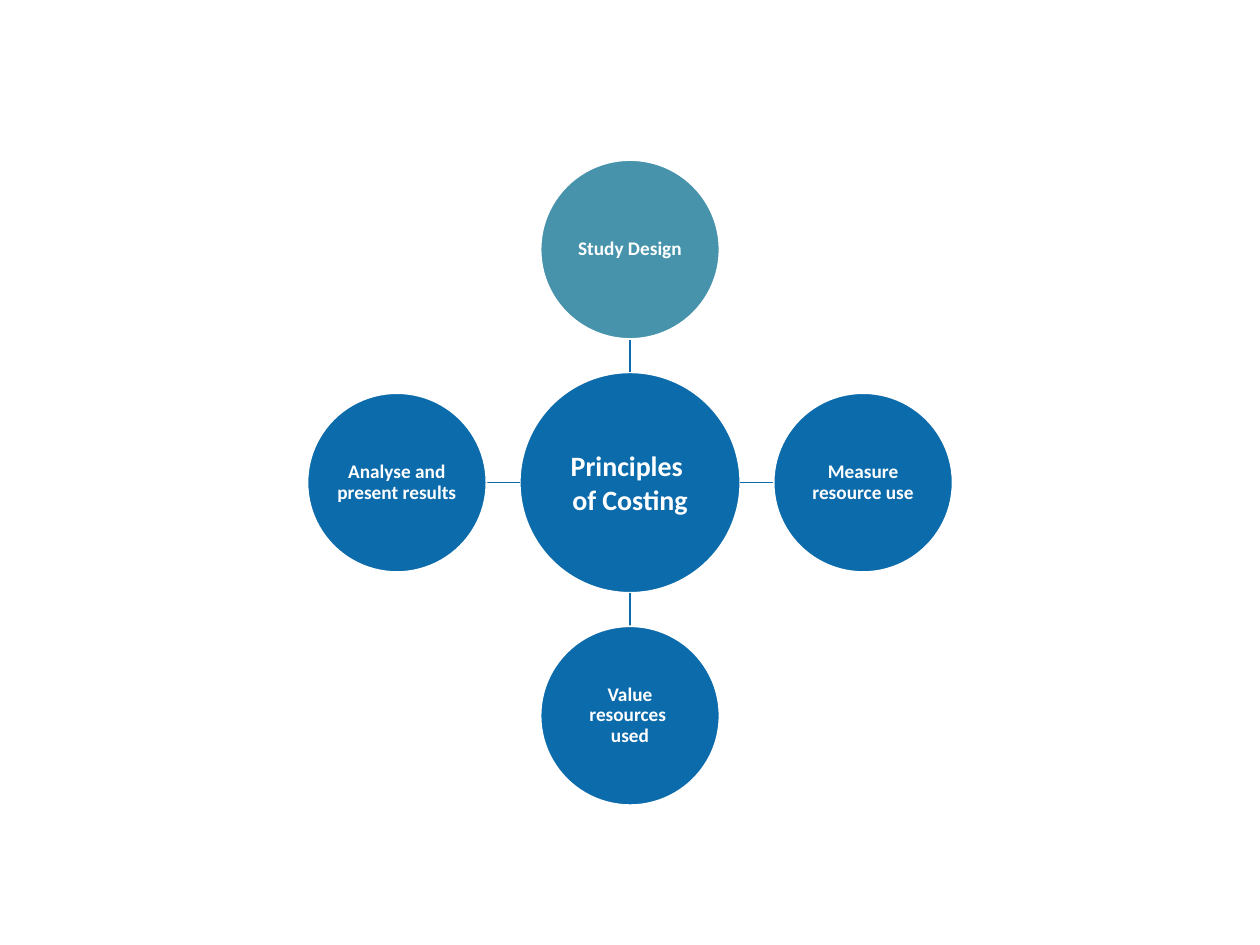
from copy import deepcopy

from pptx import Presentation
from pptx.dml.color import RGBColor
from pptx.enum.shapes import MSO_CONNECTOR, MSO_SHAPE
from pptx.enum.text import MSO_ANCHOR, PP_ALIGN
from pptx.oxml.ns import qn
from pptx.util import Inches, Pt
from lxml.etree import SubElement

BLUE, TEAL, WHITE = "0C6BAB", "4693AB", "FFFFFF"

# Content: the hub, then each step with its direction from the hub
HUB_TEXT = "Principles \nof Costing"
STEPS = [
    ("Study Design", (0, -1), TEAL),
    ("Measure resource use", (1, 0), BLUE),
    ("Value resources \nused", (0, 1), BLUE),
    ("Analyse and present results", (-1, 0), BLUE),
]

# Geometry in inches
CENTER_X, CENTER_Y = 5, 3.83
HUB_SIZE, STEP_SIZE = 1.75, 1.42
ORBIT = 1.85


def color(hex_text):
    return RGBColor.from_string(hex_text)


def write(box, text, size, spacing=None):
    frame = box.text_frame
    frame.word_wrap = True
    frame.vertical_anchor = MSO_ANCHOR.MIDDLE
    frame.margin_left = frame.margin_right = Inches(0.01)
    frame.margin_top = frame.margin_bottom = Inches(0.01)
    para = frame.paragraphs[0]
    para.text = text
    para.alignment = PP_ALIGN.CENTER
    para.line_spacing = spacing
    for span in para.runs:
        span.font.name = "Calibri"
        span.font.size = Pt(size)
        span.font.bold = True
        span.font.color.rgb = color(WHITE)
    # Line breaks take the format of the text around them
    for line_break in para._p.findall(qn("a:br")):
        line_break.append(deepcopy(para.runs[0].font._element))


def add_circle(page, x, y, diameter, fill, text, **text_format):
    circle = page.shapes.add_shape(
        MSO_SHAPE.OVAL, Inches(x - diameter / 2), Inches(y - diameter / 2),
        Inches(diameter), Inches(diameter))
    circle.shadow.inherit = False
    circle.fill.solid()
    circle.fill.fore_color.rgb = color(fill)
    circle.line.color.rgb = color(WHITE)
    circle.line.width = Pt(1)
    write(circle, text, **text_format)


def add_spoke(page, dx, dy):
    start, end = HUB_SIZE / 2, ORBIT - STEP_SIZE / 2
    spoke = page.shapes.add_connector(
        MSO_CONNECTOR.STRAIGHT,
        Inches(CENTER_X + dx * start), Inches(CENTER_Y + dy * start),
        Inches(CENTER_X + dx * end), Inches(CENTER_Y + dy * end))
    spoke.line.color.rgb = color(BLUE)
    spoke.line.width = Pt(1)
    SubElement(spoke._element.spPr, qn("a:effectLst"))


def main():
    deck = Presentation()
    deck.slide_width, deck.slide_height = Inches(10), Inches(7.5)
    page = deck.slides.add_slide(deck.slide_layouts[6])

    # Hub
    add_circle(page, CENTER_X, CENTER_Y, HUB_SIZE, BLUE, HUB_TEXT, size=16)

    # Steps around the hub
    for text, (dx, dy), fill in STEPS:
        add_spoke(page, dx, dy)
        add_circle(page, CENTER_X + dx * ORBIT, CENTER_Y + dy * ORBIT,
                   STEP_SIZE, fill, text, size=11, spacing=0.9)

    deck.save("out.pptx")


if __name__ == "__main__":
    main()
